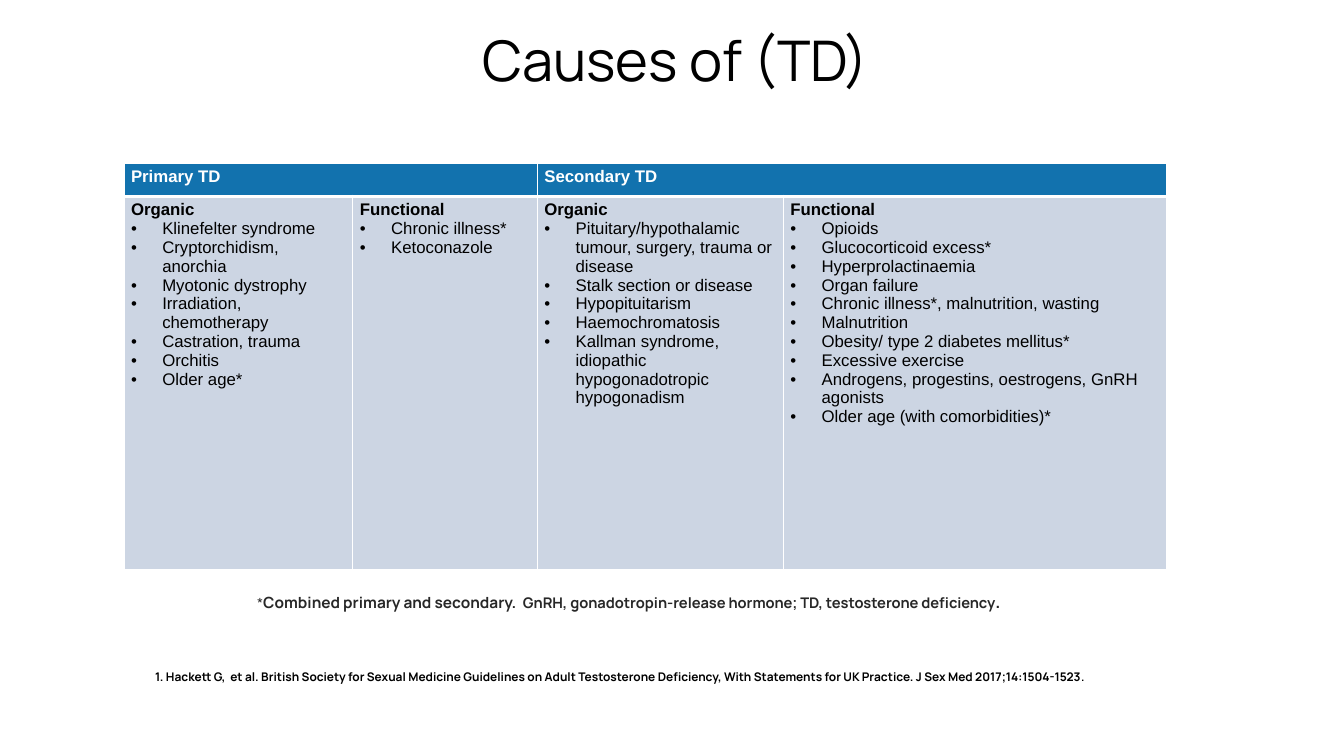
from lxml import etree
from pptx import Presentation
from pptx.dml.color import RGBColor
from pptx.enum.text import MSO_ANCHOR as Anchor, PP_ALIGN as Align
from pptx.oxml.ns import qn
from pptx.util import Inches, Pt

# Content
TITLE = "Causes of (TD)"
CAUSES = [
    ("Primary TD", [
        ("Organic", ["Klinefelter syndrome", "Cryptorchidism, anorchia", "Myotonic dystrophy",
                     "Irradiation, chemotherapy", "Castration, trauma", "Orchitis", "Older age*"]),
        ("Functional", ["Chronic illness*", "Ketoconazole"]),
    ]),
    ("Secondary TD", [
        ("Organic", ["Pituitary/hypothalamic tumour, surgery, trauma or disease",
                     "Stalk section or disease", "Hypopituitarism", "Haemochromatosis",
                     "Kallman syndrome, idiopathic hypogonadotropic hypogonadism"]),
        ("Functional", ["Opioids", "Glucocorticoid excess*", "Hyperprolactinaemia", "Organ failure",
                        "Chronic illness*, malnutrition, wasting", "Malnutrition",
                        "Obesity/ type 2 diabetes mellitus*", "Excessive exercise",
                        "Androgens, progestins, oestrogens, GnRH agonists",
                        "Older age (with comorbidities)*"]),
    ]),
]
INK = {"name": "Manrope", "color": "000000"}
NOTE = {"name": "Manrope", "color": "272727", "bold": True}
FOOTNOTE = [
    ("*", {**NOTE, "size": 10, "bold": False}),
    ("Combined primary and secondary.  ", {**NOTE, "size": 11}),
    ("GnRH, gonadotropin-release hormone; TD, testosterone deficiency", {**NOTE, "size": 10.5}),
    (".", {**NOTE, "size": 10.5, "name": "Arial"}),
]
REFERENCE = [
    ("1. Hackett G,  et al. British Society for Sexual Medicine Guidelines on Adult Testosterone "
     "Deficiency, With Statements for UK Practice. J Sex Med 2017;14:1504-1523",
     {**INK, "size": 8.5, "bold": True}),
    (". ", {**INK, "size": 8, "bold": True}),
]

# Layout and table format, in inches and points
TABLE_LEFT, TABLE_TOP = 1.23, 1.62
COLUMNS = [2.27, 1.83, 2.44, 3.8]
ROWS = [0.33, 3.7]
BULLET_INDENT = 0.31
HEADER_FILL, BODY_FILL = "1272AE", "CCD5E3"
CELL_TEXT = {"name": "Arial", "size": 12, "bold": False, "color": "000000"}
CELL_MARGINS = {"margin_left": 0.07, "margin_right": 0.07, "margin_top": 0.04, "margin_bottom": 0.04}


def rgb(value):
    return RGBColor.from_string(value)


def add_run(paragraph, text, style):
    run = paragraph.add_run()
    run.text = text
    for key, value in style.items():
        if key == "color":
            run.font.color.rgb = rgb(value)
        else:
            setattr(run.font, key, Pt(value) if key == "size" else value)


def add_text(slide, box, runs, frame_format, paragraph_format):
    frame = slide.shapes.add_textbox(*map(Inches, box)).text_frame
    for key, value in {"word_wrap": True, **frame_format}.items():
        setattr(frame, key, value)
    paragraph = frame.paragraphs[0]
    for key, value in paragraph_format.items():
        setattr(paragraph, key, value)
    for text, style in runs:
        add_run(paragraph, text, style)


def add_bullet(paragraph):
    properties = paragraph._p.get_or_add_pPr()
    properties.set("marL", str(Inches(BULLET_INDENT)))
    properties.set("indent", str(-Inches(BULLET_INDENT)))
    etree.SubElement(properties, qn("a:buFont")).set("typeface", "Arial")
    etree.SubElement(properties, qn("a:buChar")).set("char", "•")


def format_cell(cell, fill, borders):
    for key, value in CELL_MARGINS.items():
        setattr(cell, key, Inches(value))
    cell.fill.solid()
    cell.fill.fore_color.rgb = rgb(fill)
    for position, (side, width) in enumerate(borders.items()):
        line = etree.Element(qn(f"a:ln{side}"), w=str(Pt(width)))
        solid = etree.SubElement(line, qn("a:solidFill"))
        etree.SubElement(solid, qn("a:srgbClr")).set("val", "FFFFFF")
        cell._tc.get_or_add_tcPr().insert(position, line)


def add_causes_table(slide):
    table = slide.shapes.add_table(
        len(ROWS), len(COLUMNS), Inches(TABLE_LEFT), Inches(TABLE_TOP),
        Inches(sum(COLUMNS)), Inches(sum(ROWS))).table
    for column, width in zip(table.columns, COLUMNS):
        column.width = Inches(width)
    for row, height in zip(table.rows, ROWS):
        row.height = Inches(height)
    for index in range(len(COLUMNS)):
        format_cell(table.cell(0, index), HEADER_FILL, {"L": 1, "R": 1, "T": 1, "B": 3})
        format_cell(table.cell(1, index), BODY_FILL, {"L": 1, "R": 1, "T": 3, "B": 1})

    first = 0
    for heading, groups in CAUSES:
        header = table.cell(0, first)
        header.merge(table.cell(0, first + len(groups) - 1))
        add_run(header.text_frame.paragraphs[0], heading,
                {**CELL_TEXT, "bold": True, "color": "FFFFFF"})
        for index, (group, causes) in enumerate(groups, first):
            frame = table.cell(1, index).text_frame
            add_run(frame.paragraphs[0], group, {**CELL_TEXT, "bold": True})
            for cause in causes:
                paragraph = frame.add_paragraph()
                add_bullet(paragraph)
                add_run(paragraph, cause, CELL_TEXT)
        first += len(groups)


def main():
    presentation = Presentation()
    presentation.slide_width, presentation.slide_height = Inches(13.33), Inches(7.5)
    slide = presentation.slides.add_slide(presentation.slide_layouts[6])

    # Title
    add_text(slide, (1.73, 0, 9.94, 1.29), [(TITLE, {**INK, "size": 40})],
             {"vertical_anchor": Anchor.MIDDLE},
             {"alignment": Align.CENTER, "line_spacing": 0.8})

    # Table of causes
    add_causes_table(slide)

    # Footnote and reference
    add_text(slide, (2.55, 5.88, 9.03, 0.19), FOOTNOTE,
             {"vertical_anchor": Anchor.BOTTOM, "margin_left": 0, "margin_right": 0,
              "margin_top": Inches(0.01), "margin_bottom": 0}, {})
    add_text(slide, (TABLE_LEFT, 6.59, 9.86, 0.24), REFERENCE, {}, {"alignment": Align.CENTER})

    presentation.save("out.pptx")


if __name__ == "__main__":
    main()
